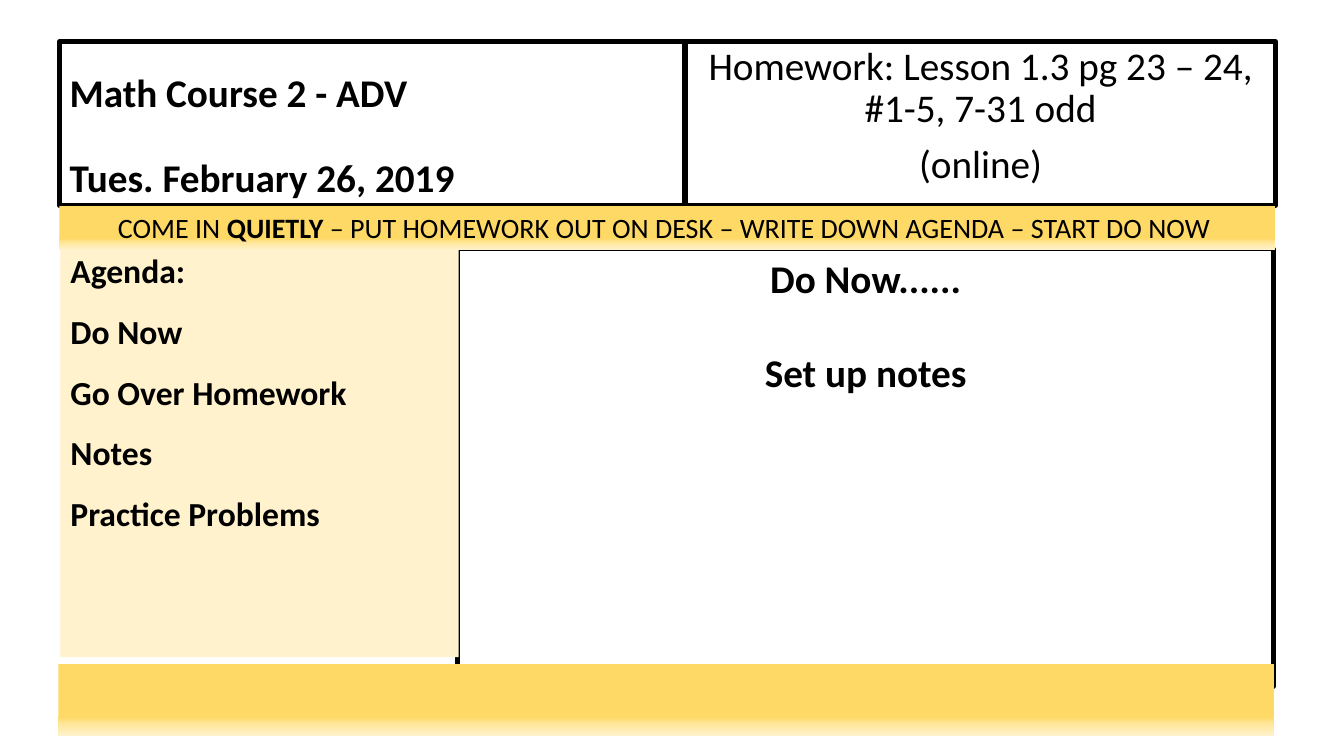
from dataclasses import dataclass

from lxml.etree import SubElement
from pptx import Presentation
from pptx.dml.color import RGBColor
from pptx.enum.shapes import MSO_SHAPE
from pptx.enum.text import MSO_ANCHOR, MSO_AUTO_SIZE, PP_ALIGN
from pptx.oxml.ns import qn
from pptx.util import Emu, Pt

PX = 9144  # EMU per px, 100 px to the inch


@dataclass(frozen=True)
class Theme:
    font: str = "Calibri"
    ink: str = "000000"
    agenda_fill: str = "FFF2CC"
    bar_stops: tuple = ((0, "FFD966"), (74, "FFD966"), (83, "FFE699"), (100, "FFF2CC"))
    outline: float = 3.25
    heading: int = 28
    agenda: int = 24
    reminder: int = 20


THEME = Theme()


def emu(box):
    return [Emu(length * PX) for length in box]


def add_box(slide, box):
    panel = slide.shapes.add_shape(MSO_SHAPE.RECTANGLE, *emu(box))
    panel.shadow.inherit = False
    panel.fill.background()
    panel.line.fill.background()
    return panel


def outline(panel):
    panel.line.color.rgb = RGBColor.from_string(THEME.ink)
    panel.line.width = Pt(THEME.outline)


def write(panel, lines, size, bold=False, align=PP_ALIGN.CENTER,
          anchor=MSO_ANCHOR.TOP, spacing=1.0, gap=0):
    """Fill the panel with paragraphs, gap points apart."""
    frame = panel.text_frame
    frame.text = "\n".join(lines)
    frame.word_wrap = True
    frame.auto_size = MSO_AUTO_SIZE.NONE
    frame.vertical_anchor = anchor
    for index, paragraph in enumerate(frame.paragraphs):
        paragraph.alignment = align
        paragraph.line_spacing = spacing
        paragraph.space_before = Pt(gap if index else 0)
        for run in paragraph.runs:
            style(run, size, bold)


def style(run, size, bold):
    run.font.name = THEME.font
    run.font.size = Pt(size)
    run.font.bold = bold
    run.font.color.rgb = RGBColor.from_string(THEME.ink)


def course_title(slide, box):
    title = slide.shapes.title
    title.left, title.top, title.width, title.height = emu(box)
    outline(title)
    write(title, ["Math Course 2 - ADV", "Tues. February 26, 2019"], THEME.heading,
          bold=True, align=PP_ALIGN.LEFT, anchor=MSO_ANCHOR.BOTTOM, spacing=0.9, gap=30)


def homework(slide, box):
    panel = add_box(slide, box)
    outline(panel)
    write(panel, ["Homework: Lesson 1.3 pg 23 – 24, #1-5, 7-31 odd", "(online)"],
          THEME.heading, spacing=0.9, gap=10)


def do_now(slide, box):
    panel = add_box(slide, box)
    outline(panel)
    write(panel, ["Do Now......", "Set up notes"], THEME.heading, bold=True, gap=34)


def gradient_bar(slide, box):
    bar = add_box(slide, box)
    bar.fill.gradient()
    bar.fill.gradient_angle = 270
    stops = bar.fill.gradient_stops
    stop_list = next(bar.element.iter(qn("a:gsLst")))
    for stop in list(stop_list):
        stop_list.remove(stop)
    for percent, color in THEME.bar_stops:
        stop = SubElement(stop_list, qn("a:gs"), pos=str(percent * 1000))
        SubElement(stop, qn("a:srgbClr"), val=color)
    return bar


def reminder(slide, box):
    bar = gradient_bar(slide, box)
    parts = (("COME IN ", False), ("QUIETLY", True),
             (" – PUT HOMEWORK OUT ON DESK – WRITE DOWN AGENDA – START DO NOW ", False))
    write(bar, [""], THEME.reminder)
    for words, bold in parts:
        run = bar.text_frame.paragraphs[0].add_run()
        run.text = words
        style(run, THEME.reminder, bold)


def agenda(slide, box):
    panel = add_box(slide, box)
    panel.fill.solid()
    panel.fill.fore_color.rgb = RGBColor.from_string(THEME.agenda_fill)
    write(panel, ["Agenda:", "Do Now", "Go Over Homework", "Notes", "Practice Problems"],
          THEME.agenda, bold=True, align=PP_ALIGN.LEFT, spacing=1.5)
    panel.text_frame.paragraphs[0].line_spacing = 0.9


def main():
    deck = Presentation()
    deck.slide_width, deck.slide_height = emu((1333, 750))
    slide = deck.slides.add_slide(deck.slide_layouts[5])
    course_title(slide, (59, 41, 620, 163))
    homework(slide, (680, 41, 585, 163))
    do_now(slide, (454, 247, 809, 434))
    reminder(slide, (59, 204, 1206, 44))
    agenda(slide, (60, 248, 395, 404))
    gradient_bar(slide, (58, 659, 1206, 71))
    deck.save("out.pptx")


if __name__ == "__main__":
    main()
